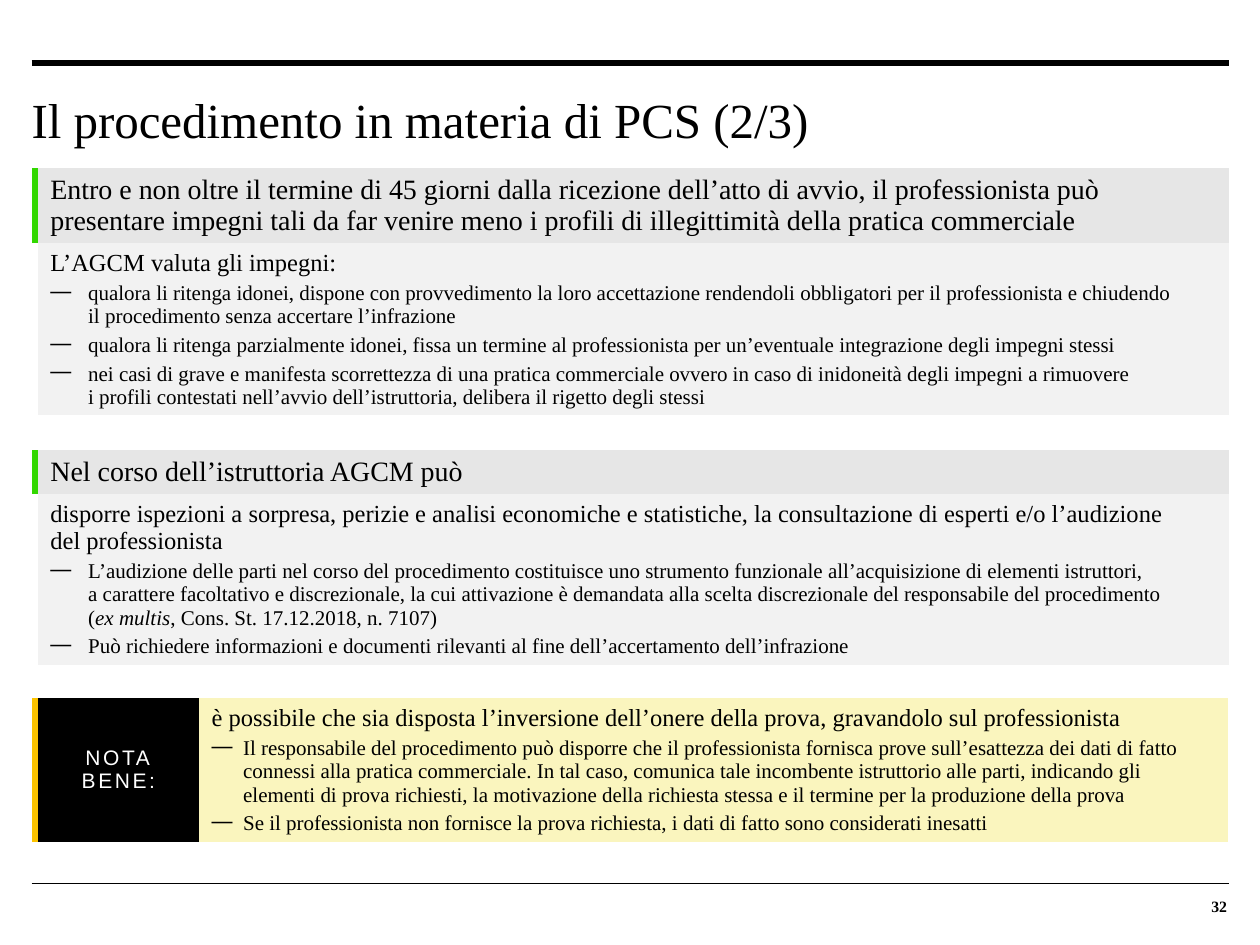
from dataclasses import dataclass

from lxml import etree
from pptx import Presentation
from pptx.dml.color import RGBColor
from pptx.enum import shapes, text
from pptx.oxml import ns
from pptx.util import Inches, Pt

COLORS = {
    "black": "000000", "white": "FFFFFF", "green": "32D700", "amber": "FCC300",
    "header": "E6E6E6", "body": "F2F2F2", "note": "FAF5BE",
}
SERIF, SANS = "Times New Roman", "Arial"
LEFT, WIDTH, BAR = 0.25, 9.5, 0.05
PLAIN_TABLE_STYLE = "{2D5ABB26-0587-4C30-8999-92F81FD0307C}"


@dataclass
class Section:
    """A headed block; *asterisks* mark italics."""
    top: float
    heights: tuple[float, float]
    heading: str
    lead: str
    points: list[str]


SECTIONS = [
    Section(
        1.33, (0.6, 1.36),
        "Entro e non oltre il termine di 45 giorni dalla ricezione dell’atto di avvio, il professionista può "
        "presentare impegni tali da far venire meno i profili di illegittimità della pratica commerciale",
        "L’AGCM valuta gli impegni:",
        ["qualora li ritenga idonei, dispone con provvedimento la loro accettazione rendendoli obbligatori "
         "per il professionista e chiudendo \nil procedimento senza accertare l’infrazione",
         "qualora li ritenga parzialmente idonei, fissa un termine al professionista per un’eventuale "
         "integrazione degli impegni stessi",
         "nei casi di grave e manifesta scorrettezza di una pratica commerciale ovvero in caso di inidoneità "
         "degli impegni a rimuovere \ni profili contestati nell’avvio dell’istruttoria, delibera il rigetto "
         "degli stessi"]),
    Section(
        3.57, (0.35, 1.35),
        "Nel corso dell’istruttoria AGCM può",
        "disporre ispezioni a sorpresa, perizie e analisi economiche e statistiche, la consultazione di "
        "esperti e/o l’audizione \ndel professionista",
        ["L’audizione delle parti nel corso del procedimento costituisce uno strumento funzionale "
         "all’acquisizione di elementi istruttori, \na carattere facoltativo e discrezionale, la cui "
         "attivazione è demandata alla scelta discrezionale del responsabile del procedimento \n"
         "(*ex multis*, Cons. St. 17.12.2018, n. 7107)",
         "Può richiedere informazioni e documenti rilevanti al fine dell’accertamento dell’infrazione"]),
]
NOTE_LEAD = "è possibile che sia disposta l’inversione dell’onere della prova, gravandolo sul professionista"
NOTE_POINTS = [
    "Il responsabile del procedimento può disporre che il professionista fornisca prove sull’esattezza dei "
    "dati di fatto connessi alla pratica commerciale. In tal caso, comunica tale incombente istruttorio alle "
    "parti, indicando gli elementi di prova richiesti, la motivazione della richiesta stessa e il termine "
    "per la produzione della prova",
    "Se il professionista non fornisce la prova richiesta, i dati di fatto sono considerati inesatti",
]


def rgb(name: str) -> RGBColor:
    return RGBColor.from_string(COLORS[name])


def write(paragraph, content: str, size: float, color: str = "black", **formats) -> None:
    """Fill a paragraph with runs, line breaks and italics."""
    for part_index, part in enumerate(content.split("*")):
        for line_index, line in enumerate(part.split("\n")):
            if line_index:
                paragraph.add_line_break()
            if not line:
                continue
            run = paragraph.add_run()
            run.text = line
            values = {"name": SERIF, "size": Pt(size), **formats}
            if part_index % 2:
                values["italic"] = True
            for attribute, value in values.items():
                setattr(run.font, attribute, value)
            run.font.color.rgb = rgb(color)


def add_dash(paragraph, indent: float) -> None:
    properties = paragraph._p.get_or_add_pPr()
    properties.set("marL", str(Inches(indent)))
    properties.set("indent", str(-Inches(indent)))
    etree.SubElement(properties, ns.qn("a:buChar")).set("char", "—")


def write_points(cell, lead: str, points: list[str], indent: float) -> None:
    frame = cell.text_frame
    write(frame.paragraphs[0], lead, 14)
    for point in points:
        paragraph = frame.add_paragraph()
        paragraph.space_before = Pt(3)
        add_dash(paragraph, indent)
        write(paragraph, point, 12)


def add_table(slide, top: float, widths: list[float], heights: tuple[float, ...], fills: list[list]):
    """Add a borderless table whose first column is a narrow colour bar."""
    frame = slide.shapes.add_table(len(heights), len(widths), Inches(LEFT), Inches(top),
                                   Inches(WIDTH), Inches(sum(heights)))
    table = frame.table
    table.first_row = table.horz_banding = False
    table._tbl.tblPr.find(ns.qn("a:tableStyleId")).text = PLAIN_TABLE_STYLE
    for column, width in zip(table.columns, widths):
        column.width = Inches(width)
    for row, height, row_fills in zip(table.rows, heights, fills):
        row.height = Inches(height)
        for cell, fill in zip(row.cells, row_fills):
            cell.vertical_anchor = text.MSO_ANCHOR.MIDDLE
            if fill:
                cell.fill.solid()
                cell.fill.fore_color.rgb = rgb(fill)
            else:
                cell.fill.background()
        bar = row.cells[0]
        bar.margin_left = bar.margin_right = bar.margin_top = bar.margin_bottom = 0
    return table


def add_section(slide, section: Section) -> None:
    table = add_table(slide, section.top, [BAR, WIDTH - BAR], section.heights,
                      [["green", "header"], [None, "body"]])
    write(table.cell(0, 1).text_frame.paragraphs[0], section.heading, 16)
    write_points(table.cell(1, 1), section.lead, section.points, 0.3)


def add_note(slide) -> None:
    label_width = 1.28
    table = add_table(slide, 5.54, [BAR, label_width, WIDTH - BAR - label_width], (1.14,),
                      [["amber", "black", "note"]])
    label = table.cell(0, 1).text_frame.paragraphs[0]
    label.alignment = text.PP_ALIGN.CENTER
    write(label, "NOTA BENE:", 12, "white", name=SANS)
    label.runs[0].font._element.set("spc", "150")
    write_points(table.cell(0, 2), NOTE_LEAD, NOTE_POINTS, 0.25)


def add_rule(slide, top: float, weight: float) -> None:
    rule = slide.shapes.add_connector(shapes.MSO_CONNECTOR.STRAIGHT, Inches(LEFT), Inches(top),
                                      Inches(LEFT + WIDTH), Inches(top))
    rule.line.color.rgb = rgb("black")
    rule.line.width = Pt(weight)
    etree.SubElement(rule._element.spPr, ns.qn("a:effectLst"))


def set_frame(shape, anchor, alignment, margin_top: float = 0):
    """Remove the insets of a text shape and return its first paragraph."""
    frame = shape.text_frame
    values = {"margin_left": 0, "margin_right": 0, "margin_top": Inches(margin_top), "margin_bottom": 0,
              "word_wrap": True, "auto_size": text.MSO_AUTO_SIZE.NONE, "vertical_anchor": anchor}
    for attribute, value in values.items():
        setattr(frame, attribute, value)
    frame.paragraphs[0].alignment = alignment
    return frame.paragraphs[0]


def main() -> None:
    presentation = Presentation()
    presentation.slide_width, presentation.slide_height = Inches(10), Inches(7.5)
    slide = presentation.slides.add_slide(presentation.slide_layouts[5])

    title = slide.shapes.title
    title.left, title.top, title.width, title.height = (Inches(n) for n in (LEFT, 0.67, WIDTH, 0.99))
    write(set_frame(title, text.MSO_ANCHOR.TOP, text.PP_ALIGN.LEFT, 0.04),
          "Il procedimento in materia di PCS (2/3)", 28)

    add_rule(slide, 0.5, 3)
    add_rule(slide, 7.01, 0.5)
    number = slide.shapes.add_textbox(Inches(9.08), Inches(7.04), Inches(0.66), Inches(0.23))
    write(set_frame(number, text.MSO_ANCHOR.BOTTOM, text.PP_ALIGN.RIGHT), "32", 9, bold=True)

    add_note(slide)
    for section in SECTIONS:
        add_section(slide, section)
    presentation.save("out.pptx")


if __name__ == "__main__":
    main()
